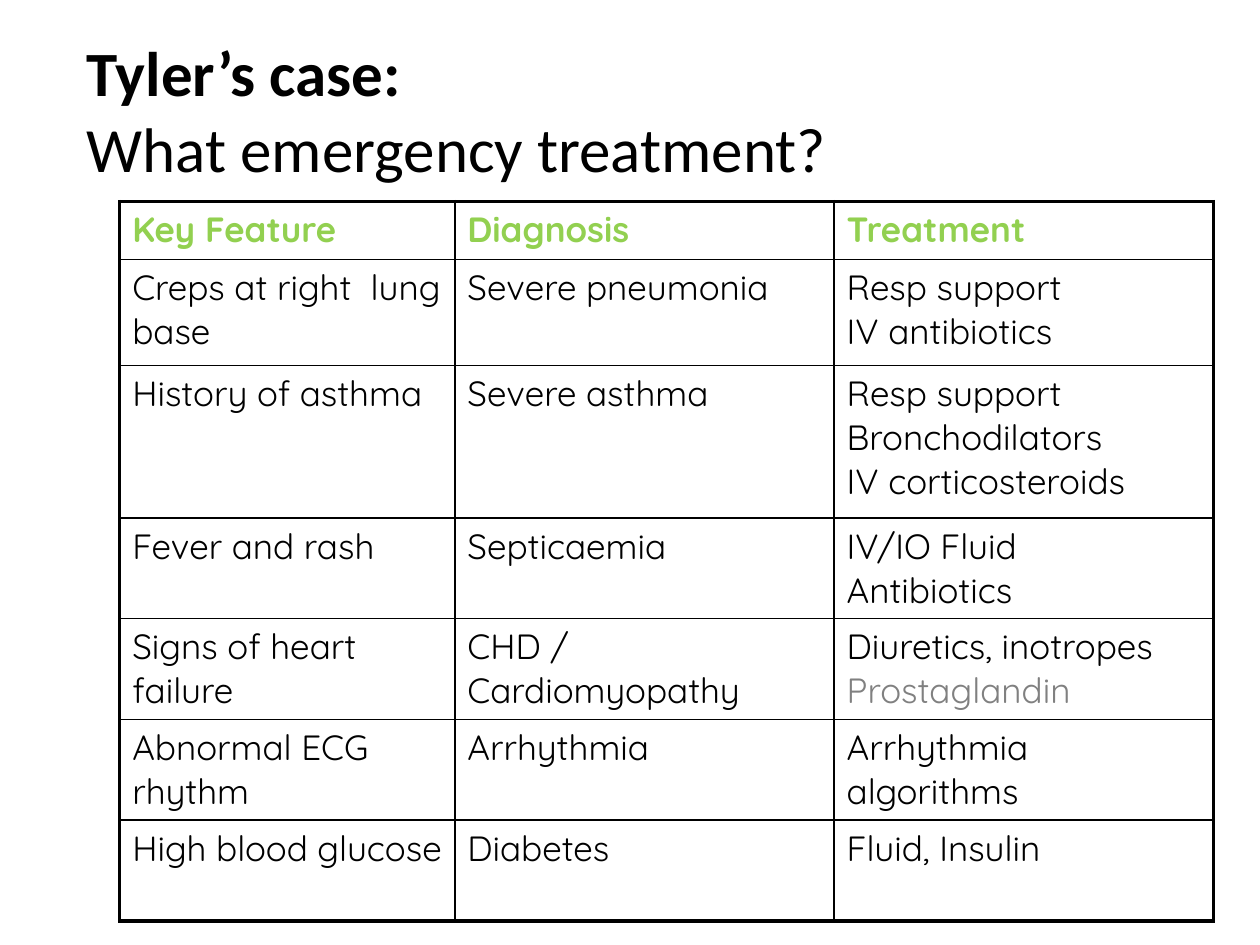
import pptx
import pptx.dml.color
import pptx.enum.text
import pptx.oxml
import pptx.oxml.ns
import pptx.util
from pptx.util import Inches

BLACK, GREEN, GREY = "000000", "92D050", "808080"
TITLE = {"name": "Calibri", "size": pptx.util.Pt(36)}
BODY = {"name": "Quicksand", "size": pptx.util.Pt(20), "bold": False}
HEADER = {**BODY, "bold": True}
THIN, THICK = 1, 2.25

COLUMN_WIDTHS = [2.66, 3.01, 3.01]
ROW_HEIGHTS = [0.46, 0.84, 1.21, 0.8, 0.8, 0.8, 0.8]
ROWS = [
    ["Key Feature", "Diagnosis", "Treatment"],
    ["Creps at right  lung base", "Severe pneumonia", "Resp support\nIV antibiotics"],
    ["History of asthma", "Severe asthma", "Resp support\nBronchodilators\nIV corticosteroids"],
    ["Fever and rash", "Septicaemia", "IV/IO Fluid\nAntibiotics"],
    ["Signs of heart failure", "CHD / Cardiomyopathy", "Diuretics, inotropes\nProstaglandin"],
    ["Abnormal ECG rhythm", "Arrhythmia", "Arrhythmia algorithms"],
    ["High blood glucose", "Diabetes", "Fluid, Insulin"],
]


def rgb(value):
    return pptx.dml.color.RGBColor.from_string(value)


def format_font(font, values, color):
    for name, value in values.items():
        setattr(font, name, value)
    font.color.rgb = rgb(color)


def set_borders(cell, widths):
    """Draw the left, right, top and bottom borders, widths in points."""
    properties = cell._tc.get_or_add_tcPr()
    for position, (side, width) in enumerate(zip("LRTB", widths)):
        border = pptx.oxml.parse_xml(
            f'<a:ln{side} {pptx.oxml.ns.nsdecls("a")} w="{pptx.util.Pt(width)}">'
            f'<a:solidFill><a:srgbClr val="{BLACK}"/></a:solidFill></a:ln{side}>'
        )
        properties.insert(position, border)


class SlideBuilder:
    def __init__(self, presentation):
        self.slide = presentation.slides.add_slide(presentation.slide_layouts[6])

    def title(self, left, top, width, height, lines):
        box = self.slide.shapes.add_textbox(*map(Inches, (left, top, width, height)))
        frame = box.text_frame
        frame.word_wrap = True
        frame.vertical_anchor = pptx.enum.text.MSO_ANCHOR.MIDDLE
        paragraph = frame.paragraphs[0]
        for index, (text, bold) in enumerate(lines):
            if index:
                paragraph.add_line_break()
            run = paragraph.add_run()
            run.text = text
            format_font(run.font, {**TITLE, "bold": bold}, BLACK)

    def table(self, left, top, rows, widths, heights):
        frame = self.slide.shapes.add_table(
            len(rows), len(widths),
            *map(Inches, (left, top, sum(widths), sum(heights))))
        table = frame.table
        table.first_row = table.horz_banding = False
        for column, width in zip(table.columns, widths):
            column.width = Inches(width)
        last_row, last_column = len(rows) - 1, len(widths) - 1
        for i, (texts, height) in enumerate(zip(rows, heights)):
            table.rows[i].height = Inches(height)
            for j, text in enumerate(texts):
                cell = table.cell(i, j)
                cell.fill.background()
                outer = (j == 0, j == last_column, i == 0, i == last_row)
                set_borders(cell, [THICK if edge else THIN for edge in outer])
                self.cell_text(cell, text, is_header=i == 0)

    def cell_text(self, cell, text, is_header):
        cell.text = text
        for paragraph in cell.text_frame.paragraphs:
            run = paragraph.runs[0]
            if is_header:
                format_font(run.font, HEADER, GREEN)
            else:
                format_font(run.font, BODY, GREY if run.text == "Prostaglandin" else BLACK)


def main():
    presentation = pptx.Presentation()
    presentation.slide_width = Inches(10)
    presentation.slide_height = Inches(7.5)
    builder = SlideBuilder(presentation)
    builder.title(0.59, 0.24, 8.5, 1.25,
                  [("Tyler’s case:", True), ("What emergency treatment?", False)])
    builder.table(0.95, 1.6, ROWS, COLUMN_WIDTHS, ROW_HEIGHTS)
    presentation.save("out.pptx")


if __name__ == "__main__":
    main()
